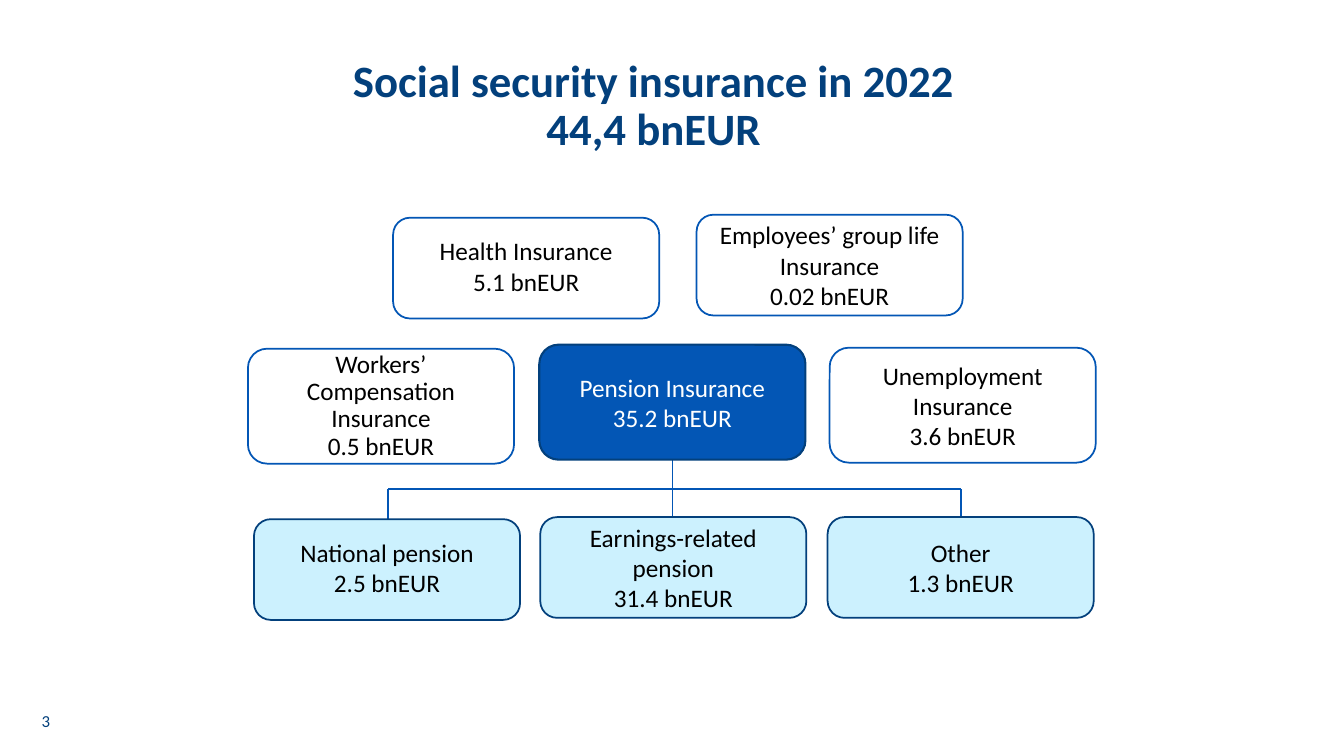
from dataclasses import dataclass

from lxml import etree
from pptx import Presentation
from pptx import util as u
from pptx.dml import color
from pptx.enum import shapes, text
from pptx.oxml import ns

SLIDE_WIDTH = u.Inches(13.33)
SLIDE_HEIGHT = u.Inches(7.5)
COLUMN = SLIDE_WIDTH / 100
ROW = SLIDE_HEIGHT / 100
BLUE = "0356B5"
NAVY = "03407C"
PALE = "CCF1FE"
BLACK = "000000"
WHITE = "FFFFFF"
BOX_COLUMNS = 19.8
SHORT_ROWS = 13.33
TALL_ROWS = 15.2
RAIL_ROW = 64.67
BRANCH_ROW = 68.67
LEFT_COLUMN, STEM_COLUMN, RIGHT_COLUMN = 28.88, 50.03, 71.48


@dataclass(frozen=True)
class Style:
    fill: str | None
    line: str
    font: str
    line_width: float = 1.25


@dataclass(frozen=True)
class Box:
    name: str
    amount: str
    column: float
    row: float
    rows: float
    style: Style
    spacings: tuple[float, float] = (1.0, 1.0)


@dataclass(frozen=True)
class Link:
    start: tuple[float, float]
    end: tuple[float, float]


INSURANCE = Style(None, BLUE, BLACK)
PENSION = Style(BLUE, NAVY, WHITE, 1.5)
PENSION_PART = Style(PALE, NAVY, BLACK)

BOXES = [
    Box("Employees’ group life Insurance", "0.02 bnEUR", 51.83, 28.4, SHORT_ROWS, INSURANCE),
    Box("Unemployment Insurance", "3.6 bnEUR", 61.73, 46, TALL_ROWS, INSURANCE),
    Box("Health Insurance", "5.1 bnEUR", 29.25, 28.8, SHORT_ROWS, INSURANCE, (0.85, 1.0)),
    Box("Earnings-related pension", "31.4 bnEUR", 40.2, 68.4, SHORT_ROWS, PENSION_PART),
    Box("National pension", "2.5 bnEUR", 18.9, 68.67, SHORT_ROWS, PENSION_PART, (0.85, 1.0)),
    Box("Other", "1.3 bnEUR", 61.58, 68.4, SHORT_ROWS, PENSION_PART),
    Box("Workers’ Compensation Insurance", "0.5 bnEUR", 18.45, 46.13, TALL_ROWS, INSURANCE, (0.9, 0.9)),
    Box("Pension Insurance", "35.2 bnEUR", 40.13, 45.6, TALL_ROWS, PENSION),
]

LINKS = [
    Link((STEM_COLUMN, 58.93), (STEM_COLUMN, BRANCH_ROW)),
    Link((LEFT_COLUMN, RAIL_ROW), (RIGHT_COLUMN, RAIL_ROW)),
    Link((LEFT_COLUMN, BRANCH_ROW), (LEFT_COLUMN, RAIL_ROW)),
    Link((RIGHT_COLUMN, BRANCH_ROW), (RIGHT_COLUMN, RAIL_ROW)),
]


def rgb(value: str) -> color.RGBColor:
    return color.RGBColor.from_string(value)


def columns(count: float) -> u.Emu:
    return u.Emu(round(count * COLUMN))


def rows(count: float) -> u.Emu:
    return u.Emu(round(count * ROW))


def area(column: float, row: float, width: float, height: float) -> tuple:
    return columns(column), rows(row), columns(width), rows(height)


def write(frame, lines: list[str], *, size: float, font_color: str, bold: bool = False,
          spacings: tuple[float, ...] = (1.0, 1.0), anchor=text.MSO_ANCHOR.MIDDLE) -> None:
    frame.word_wrap = True
    frame.auto_size = text.MSO_AUTO_SIZE.NONE
    frame.vertical_anchor = anchor
    for index, (line, spacing) in enumerate(zip(lines, spacings)):
        paragraph = frame.add_paragraph() if index else frame.paragraphs[0]
        paragraph.text = line
        paragraph.alignment = text.PP_ALIGN.CENTER
        paragraph.line_spacing = spacing
        paragraph.font.name = "Calibri"
        paragraph.font.size = u.Pt(size)
        paragraph.font.bold = bold
        paragraph.font.color.rgb = rgb(font_color)


def draw_box(slide, box: Box) -> None:
    shape = slide.shapes.add_shape(shapes.MSO_SHAPE.ROUNDED_RECTANGLE,
                                   *area(box.column, box.row, BOX_COLUMNS, box.rows))
    shape.shadow.inherit = False
    if box.style.fill:
        shape.fill.solid()
        shape.fill.fore_color.rgb = rgb(box.style.fill)
    else:
        shape.fill.background()
    shape.line.color.rgb = rgb(box.style.line)
    shape.line.width = u.Pt(box.style.line_width)
    write(shape.text_frame, [box.name, box.amount], size=18,
          font_color=box.style.font, spacings=box.spacings)


def draw_link(slide, link: Link) -> None:
    (start_column, start_row), (end_column, end_row) = link.start, link.end
    connector = slide.shapes.add_connector(
        shapes.MSO_CONNECTOR.STRAIGHT, columns(start_column), rows(start_row),
        columns(end_column), rows(end_row))
    connector.line.color.rgb = rgb(BLUE)
    connector.line.width = u.Pt(1.25)
    etree.SubElement(connector._element.spPr, ns.qn("a:effectLst"))


def draw_title(slide) -> None:
    title = slide.shapes.title
    title.left, title.top, title.width, title.height = area(0, 7.07, 97.28, 14.67)
    write(title.text_frame, ["Social security insurance in 2022\v44,4 bnEUR"], size=32,
          font_color=NAVY, bold=True, spacings=(0.9,), anchor=text.MSO_ANCHOR.TOP)


def draw_page_number(slide) -> None:
    number = slide.shapes.add_textbox(*area(1.5, 92.67, 3.83, 5.33))
    write(number.text_frame, ["3"], size=12, font_color=NAVY)


def main() -> None:
    presentation = Presentation()
    presentation.slide_width = SLIDE_WIDTH
    presentation.slide_height = SLIDE_HEIGHT
    slide = presentation.slides.add_slide(presentation.slide_layouts.get_by_name("Title Only"))
    draw_title(slide)
    for link in LINKS:
        draw_link(slide, link)
    for box in BOXES:
        draw_box(slide, box)
    draw_page_number(slide)
    presentation.save("out.pptx")


if __name__ == "__main__":
    main()
